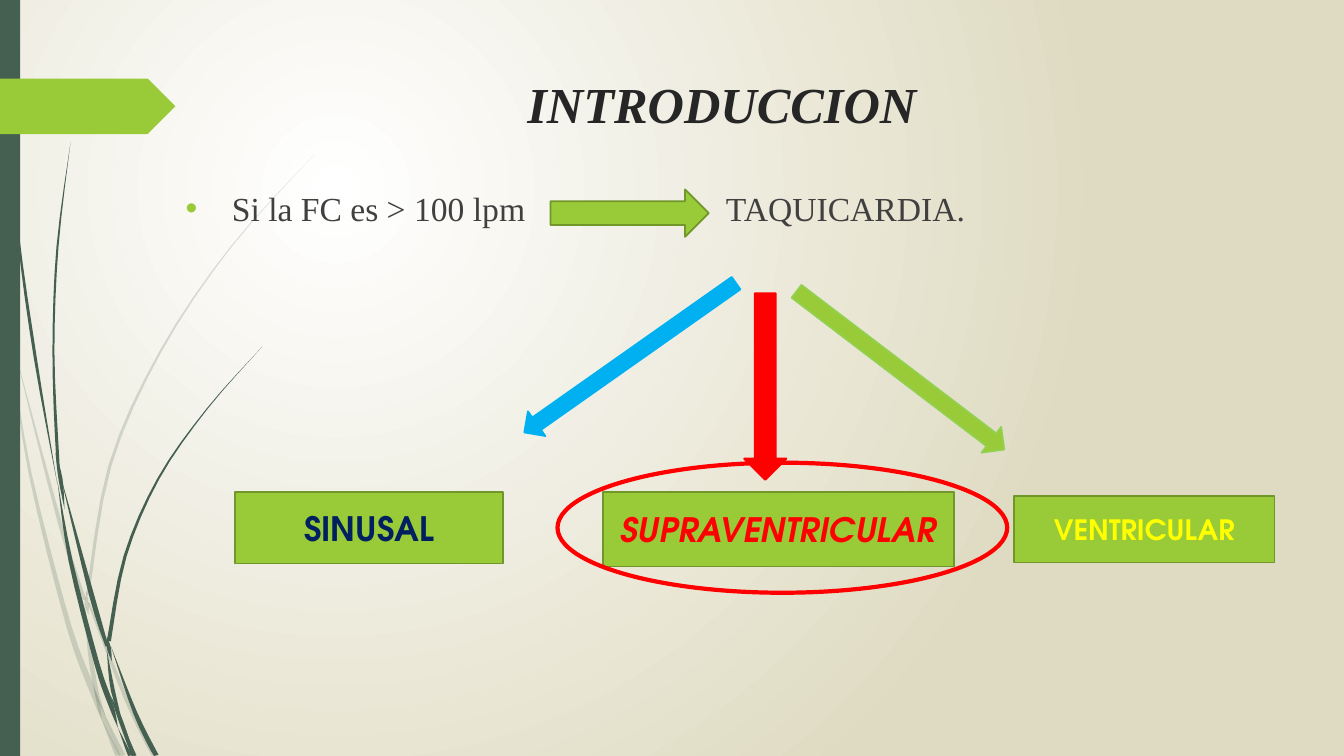
from math import atan2, degrees, hypot
from lxml import etree
from pptx import Presentation
from pptx.dml.color import RGBColor
from pptx.enum.shapes import MSO_SHAPE
from pptx.enum.text import MSO_ANCHOR, MSO_AUTO_SIZE, PP_ALIGN
from pptx.oxml.ns import qn
from pptx.util import Inches, Pt

RECT, OVAL, TAG = MSO_SHAPE.RECTANGLE, MSO_SHAPE.OVAL, MSO_SHAPE.PENTAGON
RIGHT, DOWN = MSO_SHAPE.RIGHT_ARROW, MSO_SHAPE.DOWN_ARROW
CENTER, TOP, MIDDLE = PP_ALIGN.CENTER, MSO_ANCHOR.TOP, MSO_ANCHOR.MIDDLE

WIDTH, HEIGHT = 13.33, 7.5
SERIF, SANS = "Times New Roman", "TeX Gyre Adventor"
GREEN, DARK_GREEN, FOREST, RED = "99CB38", "719629", "455F51", "FF0000"
BACKGROUND = ["FFFFFF", "DFDBC2"]
FOCUS = {"l": "50000", "t": "50000", "r": "100000", "b": "100000"}

TITLE = "INTRODUCCION"
STATEMENT = "Si la FC es > 100 lpm\tTAQUICARDIA."
CONTENT_LEFT, CONTENT_WIDTH = 1.74, 10.84
TITLE_ROW, STATEMENT_ROW = (0.68, 1.4), (1.81, 5.32)
BULLET_INDENT, CONCLUSION_TAB = 0.46, 5.36
KINDS = [
    ("SINUSAL", (2.33, 4.88, 2.66, 0.71), 24, "002060", False),
    ("SUPRAVENTRICULAR", (5.98, 4.88, 3.48, 0.74), 24, RED, True),
    ("VENTRICULAR", (10.06, 4.92, 2.58, 0.66), 20, "FFFF00", False),
]
BRANCHES = [
    ((7.3, 2.81), (5.2, 4.29), 0.3, "00B0F0", "00B0F0"),
    ((7.59, 2.91), (7.59, 4.76), 0.42, RED, RED),
    ((7.9, 2.89), (9.96, 4.46), 0.32, GREEN, "92D050"),
]
PALE_STALKS = [
    [(0, 2.9, .04), (.11, 3.5, 0)],
    [(.14, 3.45, 0), (.6, 5.21, .04), (.84, 5.95, .03)],
    [(.88, 5.98, .02), (1.25, 6.93, .04), (1.53, 7.5, .05)],
    [(1.05, 7.11, 0), (1.22, 7.5, .05)],
    [(.11, 3.5, 0), (.3, 4.7, .03), (.68, 6.2, .05), (.93, 6.88, .06), (1.01, 7.14, 0)],
    [(.84, 5.99, 0), (.89, 6.46, .04), (.96, 6.87, .04), (1.05, 7.11, 0)],
    [(3.12, 1.53, 0), (2.29, 2.45, .01), (1.59, 3.49, .02), (1.09, 4.62, .03), (.87, 5.9, .03)],
    [(1.01, 7.14, 0), (1.17, 7.5, .05)],
    [(.86, 5.86, 0), (.86, 5.99, .04), (.88, 6.1, 0)],
    [(.93, 6.83, 0), (1.02, 7.1, .05), (1.19, 7.5, .01)],
]
DARK_STALKS = [
    [(.04, 0, .01), (.08, 1.1, .01), (.18, 2.33, .02), (.35, 3.55, .03), (.57, 4.81, 0)],
    [(.6, 4.72, 0), (.91, 5.91, .05), (1.06, 6.41, .03)],
    [(1.1, 6.41, 0), (1.34, 7.07, .04), (1.55, 7.5, .05)],
    [(.57, 4.77, 0), (.7, 5.56, .04), (.96, 6.58, .05), (1.1, 6.99, .05), (1.17, 7.22, 0)],
    [(.7, 1.41, 0), (.57, 2.45, .02), (.53, 3.49, .02), (.57, 4.5, .03), (.6, 4.72, 0)],
    [(1.22, 7.19, 0), (1.34, 7.5, .03)],
    [(.55, 4.49, 0), (.6, 4.75, .04), (.64, 5.05, 0)],
    [(2.6, 3.44, 0), (2.05, 4.06, .01), (1.57, 4.75, .02), (1.24, 5.52, .03), (1.08, 6.36, .04)],
    [(1.17, 7.22, 0), (1.29, 7.5, .04)],
    [(1.06, 6.45, 0), (1.12, 6.85, .04), (1.22, 7.19, 0)],
    [(1.06, 6.31, 0), (1.08, 6.43, .04), (1.11, 6.56, 0)],
    [(1.1, 6.91, 0), (1.19, 7.13, .04), (1.32, 7.5, .03)],
]

def color(code):
    """Turn a hex string into a colour."""
    return RGBColor.from_string(code)

def paint(shape, fill, line=None, weight=1.25):
    """Set the fill and outline and drop the shadow."""
    shape.shadow.inherit = False
    if fill:
        shape.fill.solid()
        shape.fill.fore_color.rgb = color(fill)
    else:
        shape.fill.background()
    if line:
        shape.line.color.rgb = color(line)
        shape.line.width = Pt(weight)
    else:
        shape.line.fill.background()

def add_block(slide, preset, box, fill, line=None, weight=1.25):
    """Add a painted preset shape."""
    block = slide.shapes.add_shape(preset, *map(Inches, box))
    paint(block, fill, line, weight)
    return block

def write(paragraph, text, font, size, code, bold=False, italic=False):
    """Add one formatted run."""
    run = paragraph.add_run()
    run.text = text
    run.font.name, run.font.size = font, Pt(size)
    run.font.bold, run.font.italic = bold, italic
    run.font.color.rgb = color(code)

def smooth(knots, steps=4):
    """Interpolate the knots with a Catmull-Rom spline."""
    padded = [knots[0], *knots, knots[-1]]
    points = []
    for quad in zip(padded, padded[1:], padded[2:], padded[3:]):
        for t in (step / steps for step in range(steps)):
            points.append(tuple(
                q + t * (r - p) / 2 + t * t * (2 * p - 5 * q + 4 * r - s) / 2
                + t ** 3 * (3 * q - p - 3 * r + s) / 2
                for p, q, r, s in zip(*quad)))
    return points + [knots[-1]]

def add_stalk(slide, knots, alpha=None):
    """Draw a tapered grass stalk along its centre line."""
    points = smooth(knots)
    one_side, other_side = [], []
    for (x0, y0, _), (x, y, width), (x1, y1, _) in zip(
            points[:1] + points, points, points[1:] + points[-1:]):
        half = width / 2 / hypot(x1 - x0, y1 - y0)
        shift_x, shift_y = (y0 - y1) * half, (x1 - x0) * half
        one_side.append((x + shift_x, y + shift_y))
        other_side.append((x - shift_x, y - shift_y))
    outline = [(Inches(max(x, 0)), Inches(min(max(y, 0), HEIGHT)))
               for x, y in one_side + other_side[::-1]]
    builder = slide.shapes.build_freeform(*outline[0])
    builder.add_line_segments(outline[1:], close=True)
    stalk = builder.convert_to_shape()
    paint(stalk, FOREST)
    if alpha:
        tint = next(stalk.element.spPr.iter(qn("a:srgbClr")))
        etree.SubElement(tint, qn("a:alpha"), val=str(alpha * 1000))

def add_background(slide):
    """Fill the background with a radial gradient."""
    fill = slide.background.fill
    fill.gradient()
    for stop, code in zip(fill.gradient_stops, BACKGROUND):
        stop.color.rgb = color(code)
    gradient = next(slide.element.iter(qn("a:gradFill")))
    radial = etree.Element(qn("a:path"), path="circle")
    etree.SubElement(radial, qn("a:fillToRect"), FOCUS)
    gradient.replace(gradient.find(qn("a:lin")), radial)

def place(holder, row):
    """Move a placeholder to its row, in front, and return its paragraph."""
    holder.left, holder.width = Inches(CONTENT_LEFT), Inches(CONTENT_WIDTH)
    holder.top, holder.height = map(Inches, row)
    holder.element.getparent().append(holder.element)
    frame = holder.text_frame
    frame.auto_size, frame.vertical_anchor = MSO_AUTO_SIZE.NONE, TOP
    frame.paragraphs[0].space_before = Pt(0)
    return frame.paragraphs[0]

def add_statement(holder):
    """Write the bulleted statement with its conclusion at a tab stop."""
    paragraph = place(holder, STATEMENT_ROW)
    props = paragraph._p.get_or_add_pPr()
    props.set("marL", str(Inches(BULLET_INDENT)))
    props.set("indent", str(-Inches(BULLET_INDENT)))
    bullet_color = etree.SubElement(props, qn("a:buClr"))
    etree.SubElement(bullet_color, qn("a:srgbClr"), val=GREEN)
    etree.SubElement(props, qn("a:buFont"), typeface="Arial")
    etree.SubElement(props, qn("a:buChar"), char="•")
    tabs = etree.SubElement(props, qn("a:tabLst"))
    etree.SubElement(tabs, qn("a:tab"), pos=str(Inches(CONCLUSION_TAB)), algn="l")
    write(paragraph, STATEMENT, SERIF, 24, "404040")

def main():
    """Build the slide and save it."""
    deck = Presentation()
    deck.slide_width, deck.slide_height = Inches(WIDTH), Inches(HEIGHT)
    slide = deck.slides.add_slide(deck.slide_layouts[1])
    add_background(slide)
    for stalks, alpha in ((PALE_STALKS, 20), (DARK_STALKS, None)):
        for knots in stalks:
            add_stalk(slide, knots, alpha)
    add_block(slide, RECT, (0, 0, 0.2, HEIGHT), FOREST)
    add_block(slide, TAG, (0, 0.78, 1.74, 0.55), GREEN)
    heading = place(slide.shapes.title, TITLE_ROW)
    heading.alignment = CENTER
    write(heading, TITLE, SERIF, 36, "262626", bold=True, italic=True)
    add_statement(slide.placeholders[1])
    add_block(slide, RIGHT, (5.46, 1.88, 1.57, 0.47), GREEN, DARK_GREEN)
    for kind, box, size, code, italic in KINDS:
        label = add_block(slide, RECT, box, GREEN, DARK_GREEN)
        label.text_frame.vertical_anchor = MIDDLE
        paragraph = label.text_frame.paragraphs[0]
        paragraph.alignment = CENTER
        write(paragraph, kind, SANS, size, code, bold=True, italic=italic)
    for (x1, y1), (x2, y2), width, fill, line in BRANCHES:
        length = hypot(x2 - x1, y2 - y1)
        box = ((x1 + x2 - width) / 2, (y1 + y2 - length) / 2, width, length)
        branch = add_block(slide, DOWN, box, fill, line)
        branch.rotation = degrees(atan2(x1 - x2, y2 - y1))
    add_block(slide, OVAL, (5.53, 4.59, 4.46, 1.29), None, RED, 3)
    deck.save("out.pptx")

if __name__ == "__main__":
    main()
